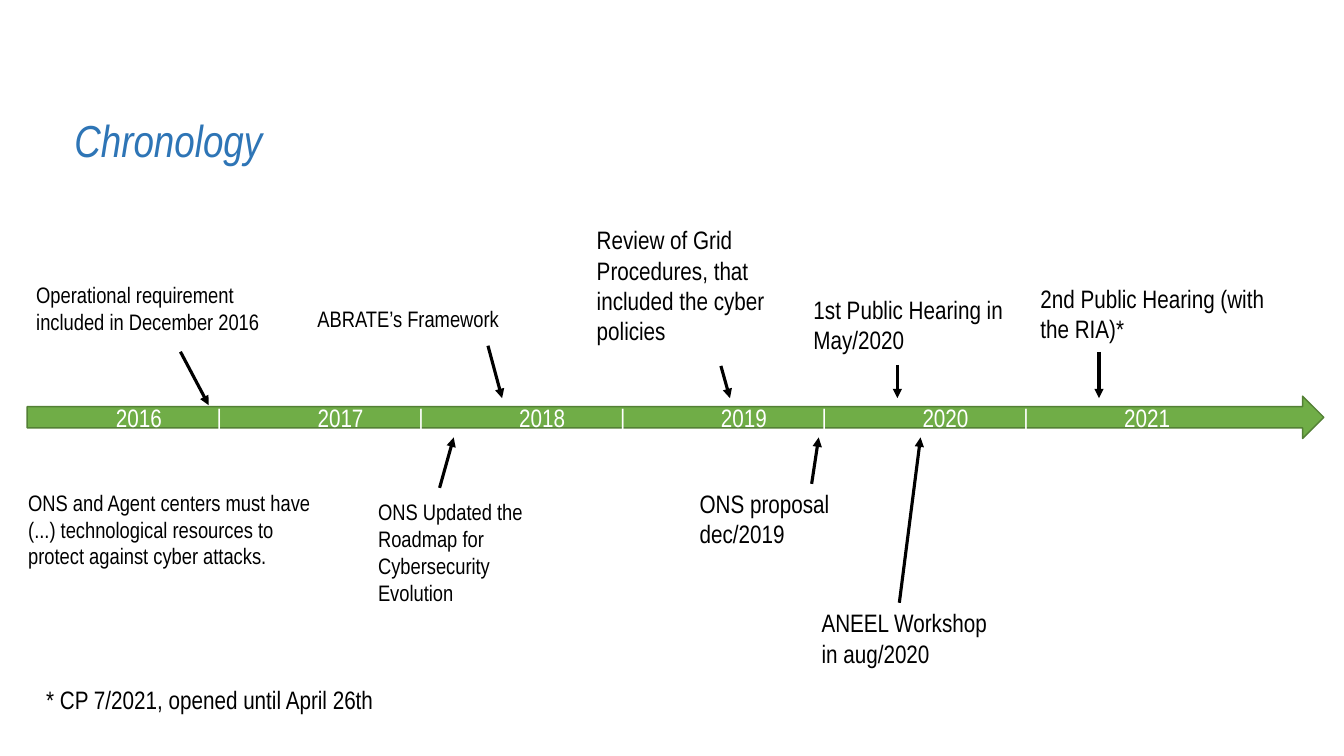
from lxml.etree import SubElement
from pptx import Presentation
from pptx.dml.color import RGBColor
from pptx.enum.shapes import MSO_CONNECTOR, MSO_SHAPE
from pptx.enum.text import MSO_ANCHOR, MSO_AUTO_SIZE, PP_ALIGN
from pptx.oxml.ns import qn
from pptx.util import Inches, Pt

# Content: places are in cells of a grid, ten cells to the inch
COLORS = {"title": "2E75B6", "bar": "70AD47", "edge": "538035",
          "year": "FFFFFF", "ink": "000000"}
FONT = "Arial Narrow"
YEARS = range(2016, 2022)
BAR = (2.7, 39.3, 128.6, 4.2)
FIRST_YEAR, TAB = 11.5, 10  # column of the first year, columns per tab stop
ABOVE, BELOW = 39.5, 43.4  # rows where arrows meet the bar

TITLE = ("Chronology", (6.4, 10.7, 120.4, 6.4))
FOOTNOTE = ("* CP 7/2021, opened until April 26th", (3.6, 67.4, 50.7, 4))

# Small notes: text, box, inset kept or not
SMALL_NOTES = [
    ("ABRATE’s Framework", (30.5, 29.8, 24.6, 3.7), True),
    ("Operational requirement included in December 2016",
     (3.6, 28, 25.7, 5.1), False),
    ("ONS Updated the Roadmap for Cybersecurity Evolution",
     (37.5, 49.5, 15.3, 10.5), False),
    ("ONS and Agent centers must have (...) technological resources "
     "to protect against cyber attacks.", (2.8, 48.6, 28.3, 7.8), False),
]
LARGE_NOTES = [
    ("ONS proposal dec/2019", (68.4, 47.9, 19.7, 7.1)),
    ("Review of Grid Procedures, that included the cyber policies",
     (58.2, 21.8, 20.5, 13.1)),
    ("ANEEL Workshop in aug/2020", (80.5, 59.8, 19.7, 7.1)),
    ("1st Public Hearing in May/2020", (79.7, 28.7, 24.6, 7.1)),
    ("2nd Public Hearing (with the RIA)*", (102.2, 27.6, 24.6, 7.1)),
]
# Arrows: start column and row, tip column and row
ARROWS = [
    (17.9, 34.9, 20.7, 40.2),
    (48.4, 34.3, 49.8, ABOVE),
    (43.6, 48.4, 45, BELOW),
    (80.5, 48, 81.2, BELOW),
    (71.5, 36.3, 72.4, ABOVE),
    (89.2, 59.8, 91.3, BELOW),
    (89, 36.2, 89, ABOVE),
    (109, 34.9, 109, ABOVE),
]

prs = Presentation()
prs.slide_width, prs.slide_height = Inches(13.33), Inches(7.5)
s = prs.slides.add_slide(prs.slide_layouts[6])


def cells(values):
    return [Inches(v / 10) for v in values]


def rgb(name):
    return RGBColor.from_string(COLORS[name])


def write(tf, text, color, **fmt):
    r = tf.paragraphs[0].add_run()
    r.text = text
    r.font.color.rgb = rgb(color)
    for key, value in {"name": FONT, **fmt}.items():
        setattr(r.font, key, value)


def add_note(text, box, size=18, color="ink", inset=True, **fmt):
    tf = s.shapes.add_textbox(*cells(box)).text_frame
    layout = {"word_wrap": True, "auto_size": MSO_AUTO_SIZE.SHAPE_TO_FIT_TEXT}
    if not inset:
        layout |= {"vertical_anchor": MSO_ANCHOR.MIDDLE}
        layout |= {f"margin_{side}": 0
                   for side in ("left", "right", "top", "bottom")}
    for key, value in layout.items():
        setattr(tf, key, value)
    write(tf, text, color, size=Pt(size), **fmt)


def add_arrow(ends):
    line = s.shapes.add_connector(MSO_CONNECTOR.STRAIGHT, *cells(ends))
    line.line.color.rgb = rgb("ink")
    line.line.width = Pt(2.25)
    SubElement(line.line._get_or_add_ln(), qn("a:tailEnd"), type="triangle")
    SubElement(line._element.spPr, qn("a:effectLst"))


# Title
add_note(*TITLE, size=32, color="title", italic=True)

# Timeline bar
bar = s.shapes.add_shape(MSO_SHAPE.RIGHT_ARROW, *cells(BAR))
bar.shadow.inherit = False
bar.fill.solid()
bar.fill.fore_color.rgb = rgb("bar")
bar.line.color.rgb = rgb("edge")
bar.line.width = Pt(1)

# Years and separators, one tab stop apart
tf = bar.text_frame
tf.word_wrap = True
tf.vertical_anchor = MSO_ANCHOR.MIDDLE
tf.margin_left = Inches((FIRST_YEAR - BAR[0]) / 10)
p = tf.paragraphs[0]
p.alignment = PP_ALIGN.LEFT
tabs = SubElement(p._p.get_or_add_pPr(), qn("a:tabLst"))
for stop in cells(TAB * n for n in range(1, 2 * len(YEARS) - 1)):
    SubElement(tabs, qn("a:tab"), pos=str(int(stop)), algn="l")
write(tf, "\t|\t".join(map(str, YEARS)), "year", size=Pt(18))

# Events and their arrows
for text, box, inset in SMALL_NOTES:
    add_note(text, box, size=16, inset=inset)
for text, box in LARGE_NOTES:
    add_note(text, box)
for ends in ARROWS:
    add_arrow(ends)

# Footnote
add_note(*FOOTNOTE)

prs.save("out.pptx")
